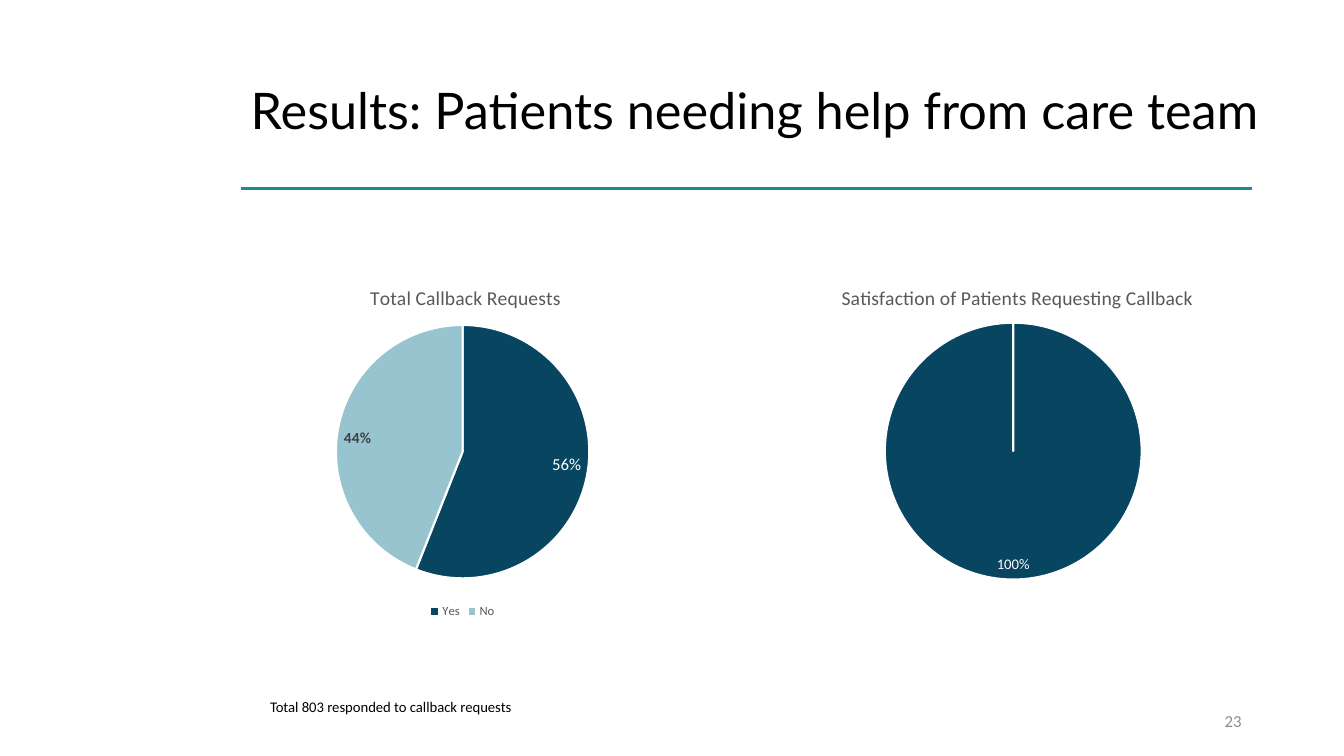
from lxml import etree
from pptx import Presentation
from pptx import util as u
from pptx.chart.data import ChartData
from pptx.dml.color import RGBColor
from pptx.enum import chart as ch, shapes, text
from pptx.oxml import parse_xml
from pptx.oxml.ns import qn

Pt = u.Pt
NS = "http://schemas.openxmlformats.org/drawingml/2006/chart"
HUES = {"ink": "000000", "teal": "1A8A99", "navy": "084561", "sky": "98C4D0",
        "gray": "595959", "dark": "404040", "pale": "8C8C8C", "white": "FFFFFF"}


def hue(name):
    return RGBColor.from_string(HUES[name])


class Deck:
    def __init__(self, wide, high):
        self.prs = Presentation()
        self.prs.slide_width, self.prs.slide_height = Pt(wide), Pt(high)
        self.slide = self.prs.slides.add_slide(self.prs.slide_layouts[6])
        self.face = "Calibri"

    def style(self, font, size, color, bold=False, face=None):
        looks = {"size": Pt(size), "bold": bold, "name": face or self.face}
        for key, val in looks.items():
            setattr(font, key, val)
        font.color.rgb = hue(color)

    def label(self, words, box, size, color="ink", face=None, **looks):
        frame = self.slide.shapes.add_textbox(*map(Pt, box)).text_frame
        frame.word_wrap = True
        frame.vertical_anchor = looks.pop("anchor", text.MSO_ANCHOR.TOP)
        para = frame.paragraphs[0]
        for key, val in looks.items():
            setattr(para, key, val)
        run = para.add_run()
        run.text = words
        self.style(run.font, size, color, face=face)

    def rule(self, left, right, y, color, width):
        line = self.slide.shapes.add_connector(
            shapes.MSO_CONNECTOR.STRAIGHT, Pt(left), Pt(y), Pt(right), Pt(y))
        line.line.color.rgb = hue(color)
        line.line.width = Pt(width)
        etree.SubElement(line._element.spPr, qn("a:effectLst"))

    def place(self, node, spot, index, inner=False):
        """Set a manual layout, given as fractions of the chart."""
        for old in node.findall(qn("c:layout")):
            node.remove(old)
        tags = '<c:layoutTarget val="inner"/>' if inner else ""
        tags += '<c:xMode val="edge"/><c:yMode val="edge"/>'
        tags += "".join(f'<c:{k} val="{v:.3f}"/>' for k, v in zip("xywh", spot))
        node.insert(index, parse_xml(
            f'<c:layout xmlns:c="{NS}"><c:manualLayout>{tags}'
            '</c:manualLayout></c:layout>'))

    def pie(self, title, box, start, top, size, cats, vals, fills, tags, key=False):
        wide, high = box[2:]
        data = ChartData(number_format="0%")
        data.categories = cats
        data.add_series("Series 1", vals)
        chart = self.slide.shapes.add_chart(
            ch.XL_CHART_TYPE.PIE, *map(Pt, box), data).chart
        self.style(chart.font, 10, "ink")

        # Title and plot area
        head = chart.chart_title
        head.include_in_layout = False
        run = head.text_frame.paragraphs[0].add_run()
        run.text = title
        self.style(run.font, 14, "gray")
        self.place(head._element, (start / wide, 12 / high), 1)
        spot = ((wide - size) / 2 / wide, top / high, size / wide, size / high)
        self.place(chart._chartSpace.chart.plotArea, spot, 0, inner=True)

        # Legend
        chart.has_legend = key
        if key:
            chart.legend.position = ch.XL_LEGEND_POSITION.BOTTOM
            chart.legend.include_in_layout = False
            self.style(chart.legend.font, 9, "gray")

        # Slices and their values
        plot = chart.plots[0]
        plot.vary_by_categories = True
        series = plot.series[0]
        for i, fill in enumerate(fills):
            form = series.points[i].format
            form.fill.solid()
            form.fill.fore_color.rgb = hue(fill)
            form.line.color.rgb = hue("white")
            form.line.width = Pt(1.5)
        notes = series.data_labels
        notes.show_value = True
        notes.number_format, notes.number_format_is_linked = "0%", False
        notes.position = ch.XL_LABEL_POSITION.INSIDE_END
        for i, look in tags.items():
            note = series.points[i].data_label
            self.style(note.font, *look)
            note.position = ch.XL_LABEL_POSITION.INSIDE_END


def main():
    deck = Deck(960, 540)

    # Heading
    deck.rule(172, 894, 134.6, "teal", 1.75)
    deck.label("Results: Patients needing help from care team",
               (172, 28.8, 768, 104.4), 36, face="Lato",
               anchor=text.MSO_ANCHOR.MIDDLE, line_spacing=0.9)

    # Charts
    deck.pie("Total Callback Requests", (116, 188.6, 429, 256.4), 146, 43.5, 181,
             ("Yes", "No"), (0.56, 0.44), ("navy", "sky"),
             {0: (12, "white"), 1: (11, "dark", True)}, key=True)
    deck.pie("Satisfaction of Patients Requesting Callback",
             (504, 188.6, 440, 235.4), 94.5, 42, 183.5,
             ("1", "2"), (None, 1), ("navy", "navy"), {1: (10.5, "white")})

    # Footer
    deck.label("Total 803 responded to callback requests",
               (185.8, 494.6, 305, 20), 10.5)
    deck.label("23", (678, 500.4, 216, 28.8), 12, "pale",
               anchor=text.MSO_ANCHOR.MIDDLE, alignment=text.PP_ALIGN.RIGHT)

    deck.prs.save("out.pptx")


if __name__ == "__main__":
    main()
